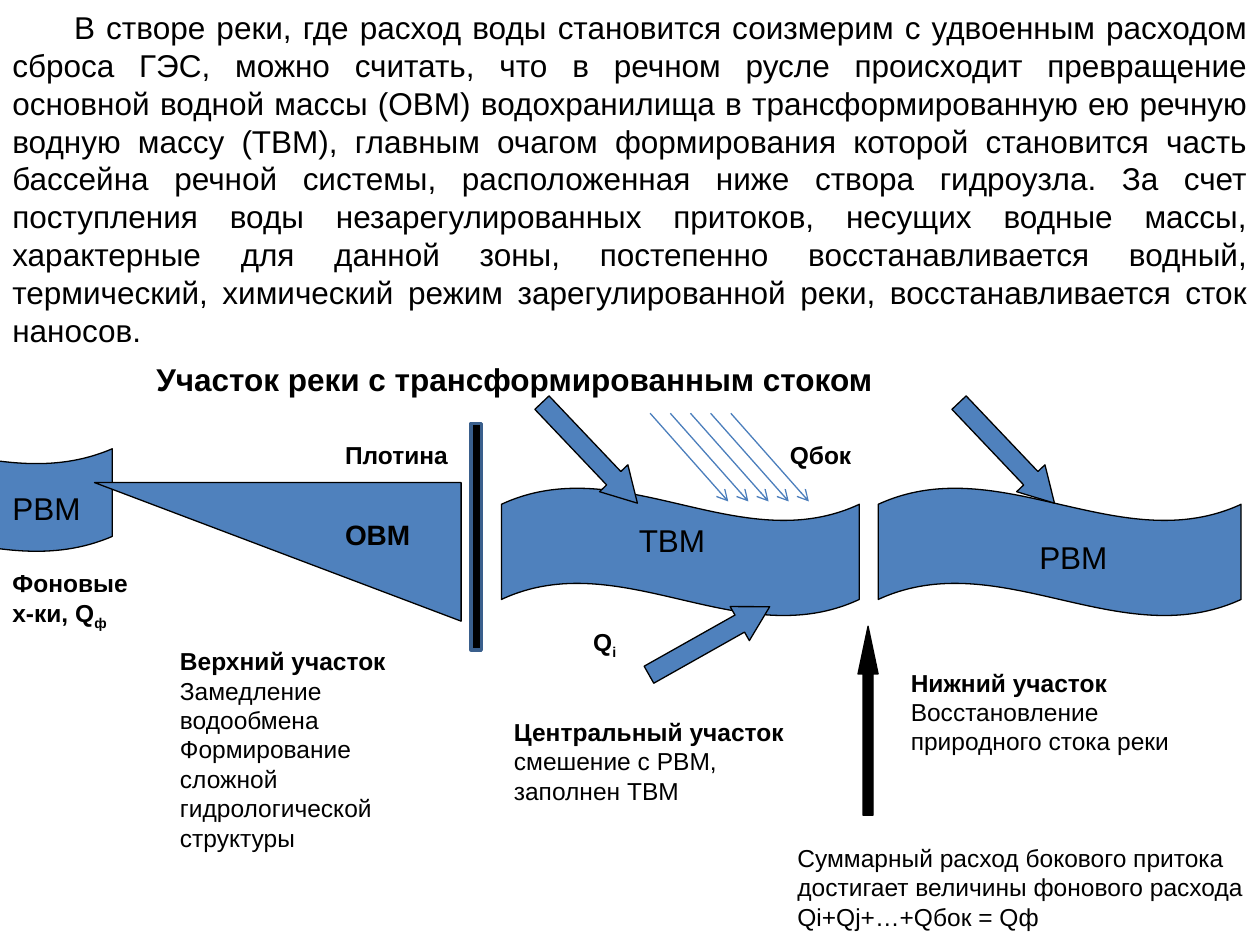
from dataclasses import dataclass

from lxml.etree import SubElement
from pptx import Presentation
from pptx.dml.color import RGBColor
from pptx.enum.shapes import MSO_CONNECTOR as Connector, MSO_SHAPE as Preset
from pptx.enum.text import MSO_ANCHOR as Anchor, MSO_AUTO_SIZE as AutoSize, PP_ALIGN as Align
from pptx.oxml.ns import qn
from pptx.util import Pt

PX = 9144  # 100 px to the inch


@dataclass(frozen=True)
class Theme:
    font: str = "Arial"
    ink: RGBColor = RGBColor(0, 0, 0)
    water: RGBColor = RGBColor(0x4F, 0x81, 0xBD)
    dam_edge: RGBColor = RGBColor(0x3A, 0x5F, 0x8C)
    inflow: RGBColor = RGBColor(0x4B, 0x7E, 0xBC)
    body: int = 18
    mass: int = 16
    note: int = 14
    hairline: float = 0.75


@dataclass(frozen=True)
class Box:
    left: int
    top: int
    width: int
    height: int

    def place(self, x, y, width, height):
        """Return the EMU position of a part given relative to this box."""
        return [value * PX for value in (self.left + x, self.top + y, width, height)]


THEME = Theme()


def set_font(paragraph, size, bold=False):
    font = paragraph.font
    font.name, font.size, font.bold = THEME.font, Pt(size), bold
    font.color.rgb = THEME.ink


def add_text(slide, position, lines, size=THEME.note, wrap=True):
    """Add a text box; each line is (text, bold) or (text, bold, subscript)."""
    frame = slide.shapes.add_textbox(*position).text_frame
    frame.word_wrap = wrap
    for index, (text, bold, *subscript) in enumerate(lines):
        paragraph = frame.add_paragraph() if index else frame.paragraphs[0]
        paragraph.add_run().text = text
        for low_text in subscript:
            run = paragraph.add_run()
            run.text = low_text
            run._r.get_or_add_rPr().set("baseline", "-25000")
        set_font(paragraph, size, bold)
    return frame


def add_figure(slide, preset, position, fill=THEME.water, line=THEME.ink,
               weight=THEME.hairline, rotation=0, adjustments=()):
    shape = slide.shapes.add_shape(preset, *position)
    shape.shadow.inherit = False
    shape.fill.solid()
    shape.fill.fore_color.rgb = fill
    shape.line.color.rgb = line
    shape.line.width = Pt(weight)
    shape.rotation = rotation
    for index, value in enumerate(adjustments):
        shape.adjustments[index] = value
    return shape


def add_wave(slide, position):
    return add_figure(slide, Preset.WAVE, position, adjustments=(0.13, 0))


def add_tributary(slide, position, rotation):
    add_figure(slide, Preset.RIGHT_ARROW, position, rotation=rotation, adjustments=(0.5, 0.88))


def add_inflow_line(slide, position):
    left, top, width, height = position
    line = slide.shapes.add_connector(Connector.STRAIGHT, left, top, left + width, top + height)
    line.line.color.rgb = THEME.inflow
    line.line.width = Pt(THEME.hairline)
    SubElement(line.line._get_or_add_ln(), qn("a:tailEnd"), type="arrow")
    SubElement(line._element.spPr, qn("a:effectLst"))


def add_introduction(slide, box):
    text = (
        "В створе реки, где расход воды становится соизмерим с удвоенным расходом сброса ГЭС, "
        "можно считать, что в речном русле происходит превращение основной водной массы (ОВМ) "
        "водохранилища в трансформированную ею речную водную массу (ТВМ), главным очагом "
        "формирования которой становится часть бассейна речной системы, расположенная ниже "
        "створа гидроузла. За счет поступления воды незарегулированных притоков, несущих водные "
        "массы, характерные для данной зоны, постепенно восстанавливается водный, термический, "
        "химический режим зарегулированной реки, восстанавливается сток наносов."
    )
    frame = add_text(slide, box.place(0, 0, box.width, box.height), [(text, False)], THEME.body)
    frame.vertical_anchor = Anchor.MIDDLE
    paragraph = frame.paragraphs[0]
    paragraph.alignment = Align.JUSTIFY
    paragraph._p.get_or_add_pPr().set("indent", str(49 * PX))


def set_title(slide, box):
    title = slide.shapes.title
    title.left, title.top, title.width, title.height = box.place(0, 0, box.width, box.height)
    frame = title.text_frame
    frame.text = "Участок реки с трансформированным стоком"
    frame.auto_size = AutoSize.NONE
    frame.vertical_anchor = Anchor.TOP
    frame.paragraphs[0].alignment = Align.LEFT
    set_font(frame.paragraphs[0], THEME.body, True)


def add_upper_section(slide, box):
    # Background river and reservoir wedge
    add_wave(slide, box.place(-195, 8, 284, 94))
    add_figure(slide, Preset.RIGHT_TRIANGLE, box.place(75, 47, 291, 110), rotation=180)
    # Dam
    add_figure(slide, Preset.RECTANGLE, box.place(374, 0, 8, 180),
               fill=THEME.ink, line=THEME.dam_edge, weight=2)
    # Labels
    add_text(slide, box.place(0, 47, 74, 40), [("РВМ", False)], THEME.body, wrap=False)
    add_text(slide, box.place(264, 70, 110, 37), [("ОВМ", True)], THEME.mass)
    add_text(slide, box.place(264, 8, 110, 33), [("Плотина", True)])
    add_text(slide, box.place(0, 110, 117, 57), [("Фоновые х-ки, Q", True, "ф")])
    add_text(slide, box.place(133, 172, 213, 196), [
        ("Верхний участок", True),
        ("Замедление водообмена", False),
        ("Формирование сложной гидрологической структуры", False),
    ])


def add_central_section(slide, box):
    # Transformed water mass
    frame = add_wave(slide, box.place(0, 59, 284, 102)).text_frame
    frame.text = "ТВМ"
    frame.vertical_anchor = Anchor.TOP
    frame.margin_left, frame.margin_top = 109 * PX, 0
    frame.paragraphs[0].alignment = Align.LEFT
    set_font(frame.paragraphs[0], THEME.body)
    # Tributaries and lateral inflow
    add_tributary(slide, box.place(15, 16, 110, 31), 46.5)
    add_tributary(slide, box.place(110, 165, 110, 31), 330.6)
    for index in range(5):
        add_inflow_line(slide, box.place(118 + 16 * index, 0, 62, 70))
    # Labels
    add_text(slide, box.place(63, 165, 47, 33), [("Q", True, "i")])
    add_text(slide, box.place(219, 16, 70, 34), [("Qбок", True)])
    add_text(slide, box.place(0, 236, 268, 103), [
        ("Центральный участок", True),
        ("смешение с РВМ, заполнен ТВМ", False),
    ])


def add_lower_section(slide, box):
    # Restored river with its tributary
    add_wave(slide, box.place(74, 43, 288, 102))
    add_tributary(slide, box.place(121, 0, 110, 31), 46.5)
    add_text(slide, box.place(192, 78, 74, 40), [("РВМ", False)], THEME.body, wrap=False)
    add_text(slide, box.place(90, 181, 268, 80), [
        ("Нижний участок", True),
        ("Восстановление природного стока реки", False),
    ])
    # Boundary arrow and its condition
    add_figure(slide, Preset.UP_ARROW, box.place(58, 153, 16, 150),
               fill=THEME.ink, adjustments=(0.5, 2.37))
    add_text(slide, box.place(0, 320, 375, 81), [
        ("Суммарный расход бокового притока достигает величины фонового расхода "
         "Qi+Qj+…+Qбок = Qф", False),
    ])


def main():
    presentation = Presentation()
    presentation.slide_width, presentation.slide_height = 1000 * PX, 750 * PX
    slide = presentation.slides.add_slide(presentation.slide_layouts[5])
    add_introduction(slide, Box(0, 0, 1000, 283))
    set_title(slide, Box(114, 281, 689, 40))
    add_upper_section(slide, Box(0, 336, 382, 368))
    add_central_section(slide, Box(398, 328, 289, 339))
    add_lower_section(slide, Box(623, 344, 375, 401))
    presentation.save("out.pptx")


if __name__ == "__main__":
    main()
